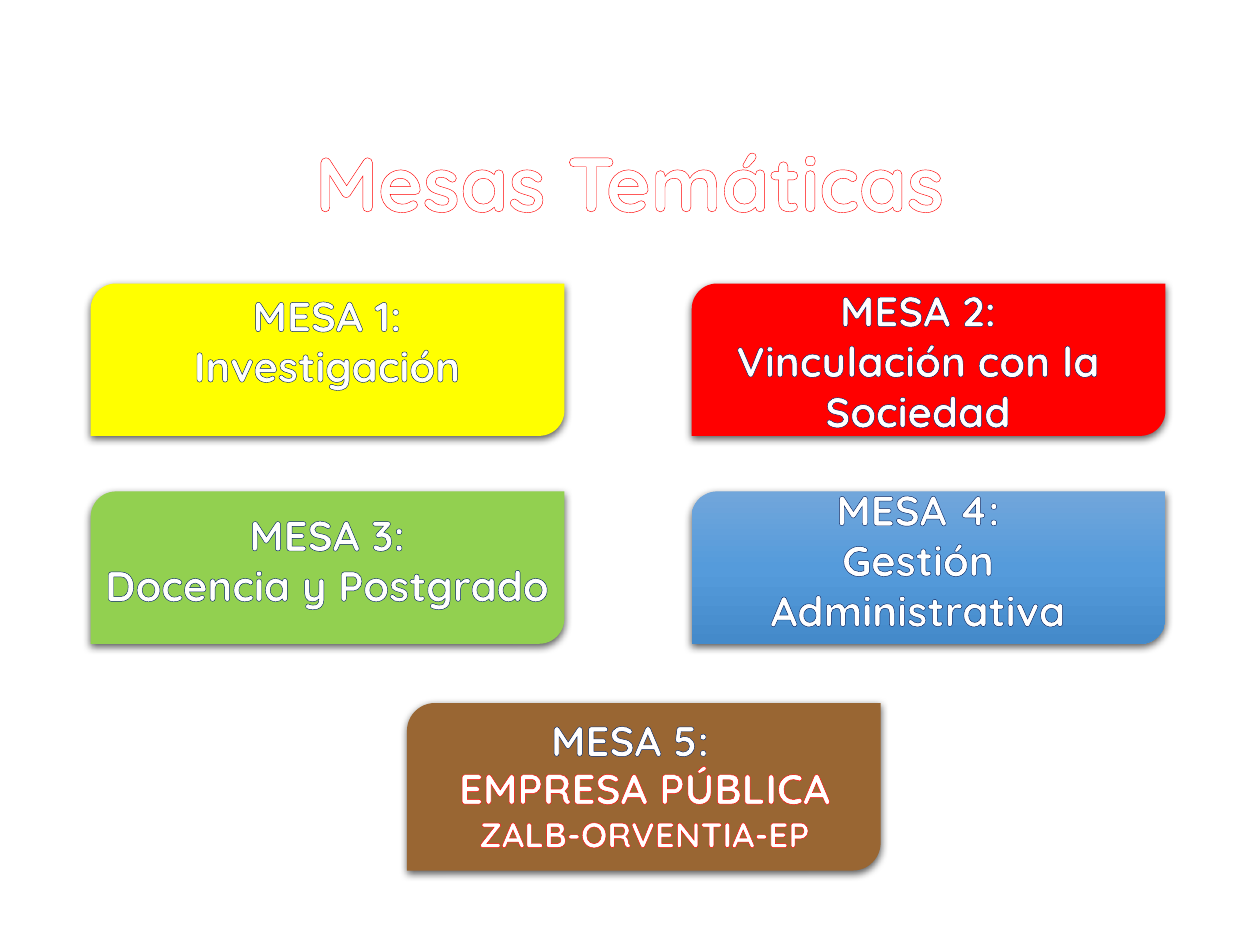
"""Build the slide that lists the five thematic tables."""
from lxml import etree
from pptx import Presentation
from pptx import util as u
from pptx.dml.color import RGBColor
from pptx.enum import shapes, text
from pptx.oxml import parse_xml
from pptx.oxml.ns import nsdecls, qn

FONT, WHITE, RED, NAVY = "Quicksand", "FFFFFF", "FF0000", "002060"
LEFT, RIGHT, CARD_WIDTH, CARD_HEIGHT = 0.72, 5.49, 3.76, 1.21
BLUE_STOPS = [(0, "71A6DB"), (50, "559BDB"), (100, "448ACA")]

CARDS = [
    (RIGHT, 3.9, CARD_HEIGHT, BLUE_STOPS),
    (LEFT, 3.9, CARD_HEIGHT, "92D050"),
    (LEFT, 2.25, CARD_HEIGHT, "FFFF00"),
    (RIGHT, 2.25, CARD_HEIGHT, "FF0000"),
    (3.23, 5.58, 1.33, "996633"),
]
TITLE = [("Mesas Temáticas", 44)]
LABELS = [
    ((3.24, 6, 3.75, 0.84), RED, True, [("EMPRESA PÚBLICA", 24), ("ZALB-ORVENTIA-EP", 20)]),
    ((0.72, 2.25, 3.75, 0.91), NAVY, True, [("MESA 1:", 24), ("Investigación", 24)]),
    ((5.41, 2.21, 3.75, 1.31), NAVY, True, [("MESA 2:", 24), ("Vinculación con la Sociedad", 24)]),
    ((5.41, 3.79, 3.75, 1.31), NAVY, True, [("MESA 4:", 24), ("Gestión Administrativa", 24)]),
    ((0.72, 3.99, 3.75, 0.91), NAVY, True, [("MESA 3:", 24), ("Docencia y Postgrado", 24)]),
    ((4.22, 5.62, 1.56, 0.5), NAVY, False, [("MESA 5:", 24)]),
]


def color(value):
    return RGBColor.from_string(value)


def inches(*values):
    return [u.Inches(value) for value in values]


def fill_card(card, paint):
    if isinstance(paint, str):
        card.fill.solid()
        card.fill.fore_color.rgb = color(paint)
        return
    card.fill.gradient()
    card.fill.gradient_angle = 270
    stop_list = card._element.spPr.find(".//" + qn("a:gsLst"))
    for stop in list(stop_list):
        stop_list.remove(stop)
    for position, value in paint:
        stop = etree.SubElement(stop_list, qn("a:gs"), pos=str(position * 1000))
        etree.SubElement(stop, qn("a:srgbClr"), val=value)


def add_card(slide, left, top, height, paint):
    card = slide.shapes.add_shape(
        shapes.MSO_SHAPE.ROUND_2_DIAG_RECTANGLE, *inches(left, top, CARD_WIDTH, height))
    fill_card(card, paint)
    card.line.fill.background()
    card.shadow.inherit = False
    effects = card._element.spPr.find(qn("a:effectLst"))
    effects.append(parse_xml(
        f'<a:outerShdw {nsdecls("a")} blurRad="{u.Pt(4.5)}" dist="{u.Pt(1.5)}" dir="5400000"'
        ' algn="ctr" rotWithShape="0"><a:srgbClr val="000000"><a:alpha val="63000"/>'
        '</a:srgbClr></a:outerShdw>'))


def write_lines(box, lines, outline, wrap=True):
    frame = box.text_frame
    frame.text = "\n".join(line for line, _ in lines)
    frame.word_wrap = wrap
    frame.vertical_anchor = text.MSO_ANCHOR.TOP
    frame.auto_size = text.MSO_AUTO_SIZE.SHAPE_TO_FIT_TEXT
    for para, (_, size) in zip(frame.paragraphs, lines):
        para.alignment = text.PP_ALIGN.CENTER
        span = para.runs[0]
        span.font.name, span.font.size, span.font.bold = FONT, u.Pt(size), True
        span.font.color.rgb = color(WHITE)
        span.font._element.insert(0, parse_xml(
            f'<a:ln {nsdecls("a")} w="{u.Pt(0.52)}"><a:solidFill>'
            f'<a:srgbClr val="{outline}"/></a:solidFill></a:ln>'))


def main():
    deck = Presentation()
    deck.slide_width, deck.slide_height = inches(10, 7.5)
    slide = deck.slides.add_slide(deck.slide_layouts[5])
    title = slide.shapes.title
    title.left, title.top, title.width, title.height = inches(0, 1.02, 10, 0.84)
    write_lines(title, TITLE, RED)
    for card in CARDS:
        add_card(slide, *card)
    for place, outline, wrap, lines in LABELS:
        write_lines(slide.shapes.add_textbox(*inches(*place)), lines, outline, wrap)
    deck.save("out.pptx")


if __name__ == "__main__":
    main()
